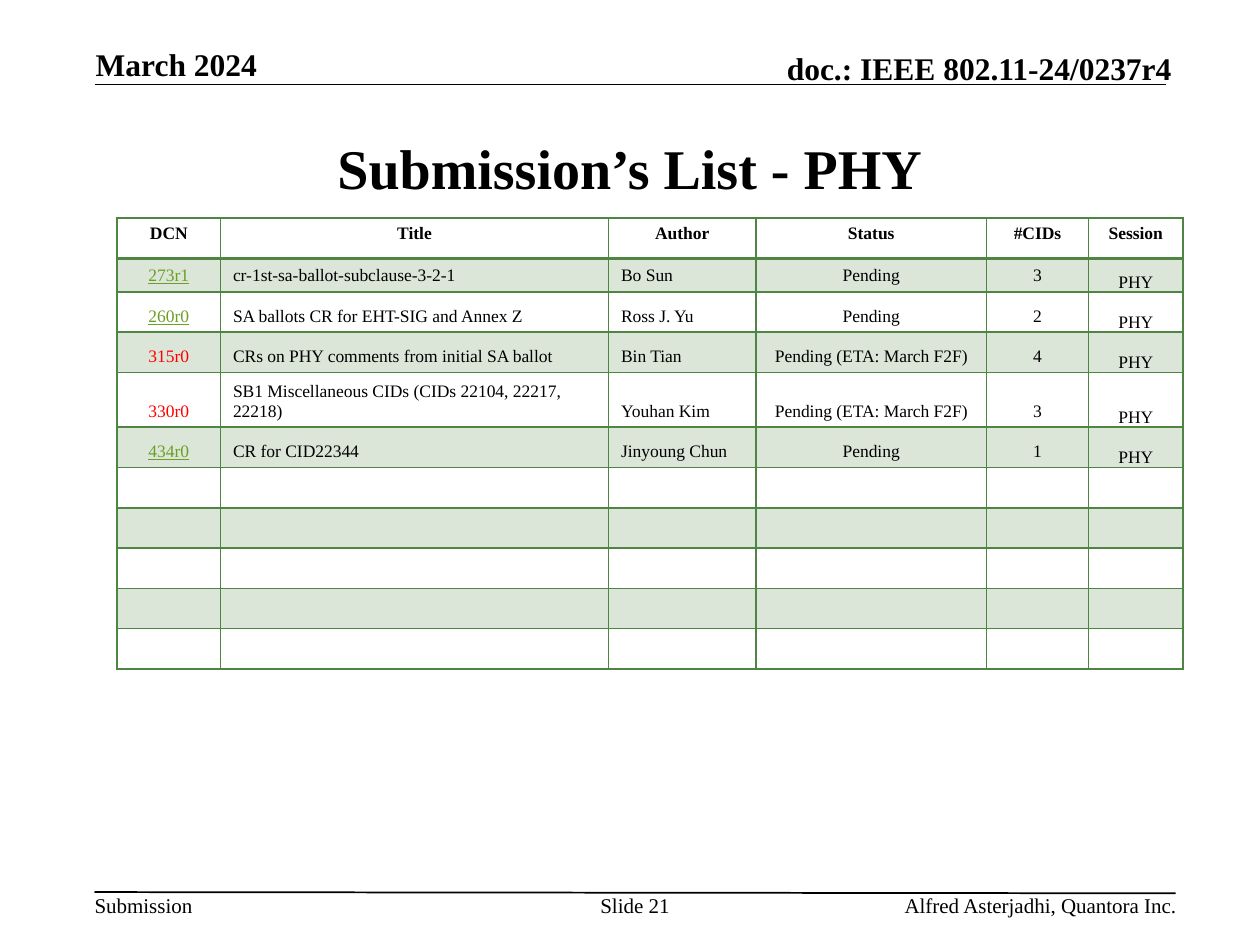
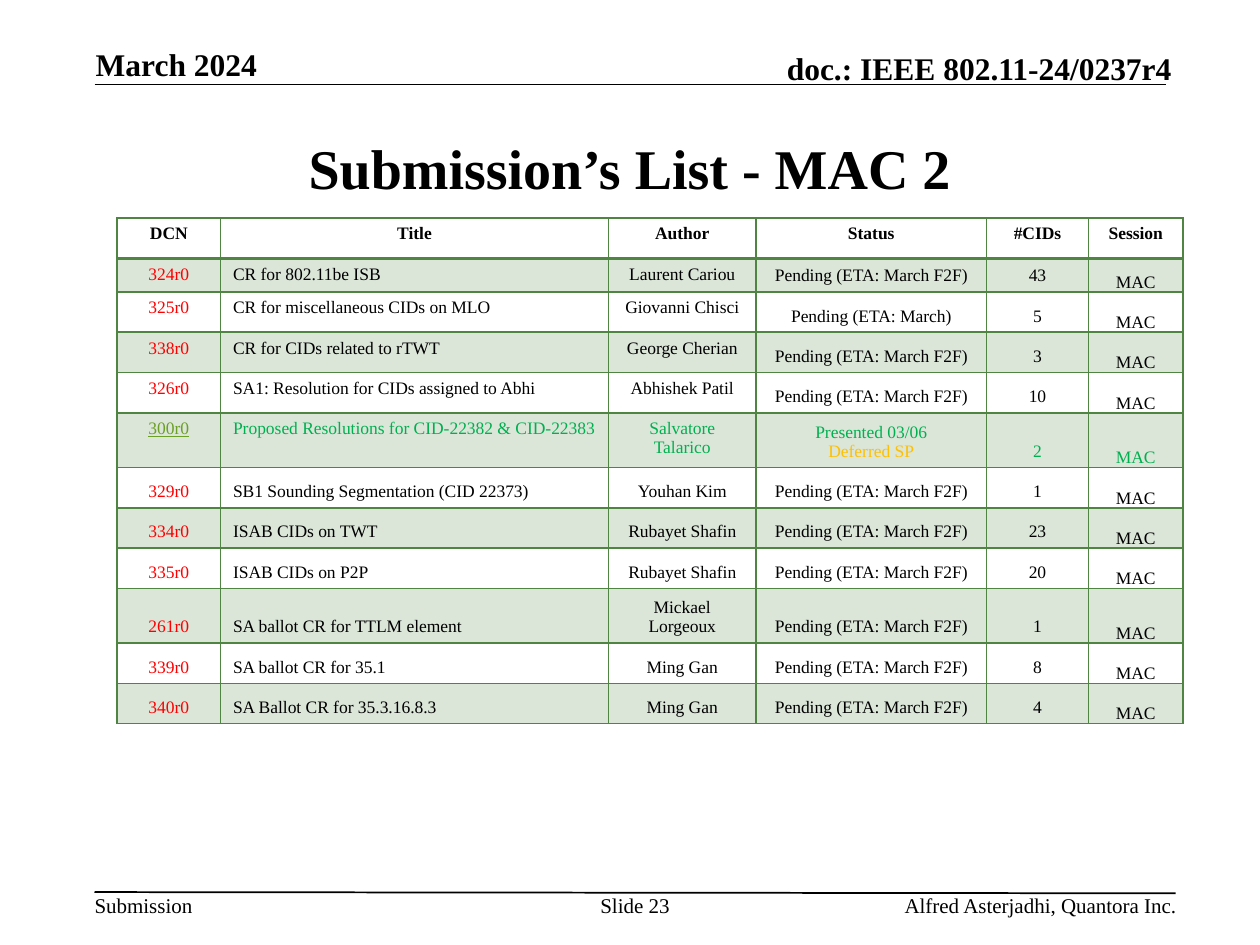
from dataclasses import dataclass

from lxml.etree import SubElement
from pptx import Presentation
from pptx.dml.color import RGBColor
from pptx.enum.shapes import MSO_CONNECTOR
from pptx.enum.text import MSO_ANCHOR as Anchor, PP_ALIGN as Align
from pptx.oxml.ns import qn
from pptx.util import Inches, Pt

FONT = "Times New Roman"
BLACK, WHITE, GREEN = "000000", "FFFFFF", "4E8542"
LINK, UNPOSTED, PRESENTED, DEFERRED = "6B9F25", "FF0000", "00B050", "FFC000"
HEADINGS = ("DCN", "Title", "Author", "Status", "#CIDs", "Session")
COLUMN_WIDTHS = (0.82, 3.08, 1.17, 1.83, 0.81, 0.75)
ROW_HEIGHT, FIRST_ROW_HEIGHT = 0.32, 0.18
TABLE_LEFT, TABLE_TOP = 0.93, 1.73
PENDING = "Pending (ETA: March F2F)"


@dataclass(frozen=True)
class Style:
    size: float
    bold: bool = False
    color: str = BLACK
    underline: bool = False
    align: Align = Align.LEFT


@dataclass(frozen=True)
class Label:
    text: str
    left: float
    top: float
    width: float
    height: float
    style: Style
    anchor: Anchor = Anchor.TOP
    wrap: bool = True


@dataclass(frozen=True)
class Rule:
    start: tuple[float, float]
    end: tuple[float, float]


@dataclass(frozen=True)
class Submission:
    dcn: str
    title: str
    author: str
    status: str
    cids: int
    posted: bool = False
    color: str = BLACK
    anchor: Anchor = Anchor.BOTTOM


@dataclass(frozen=True)
class ListPage:
    number: int
    session: str
    title: str
    author_align: Align
    submissions: tuple[Submission, ...]
    empty_rows: int = 0


HEADER = Style(18, bold=True)
HEADER_RIGHT = Style(18, bold=True, align=Align.RIGHT)
LABELS = (
    Label("Submission", 0.75, 7.08, 0.78, 0.2, Style(12), wrap=False),
    Label("doc.: IEEE 802.11-24/0237r4", 5.47, 0.39, 3.83, 0.3, HEADER_RIGHT, Anchor.BOTTOM),
    Label("March 2024", 0.76, 0.36, 2.05, 0.3, HEADER, Anchor.BOTTOM),
    Label("Alfred Asterjadhi, Quantora Inc.", 5.86, 7.08, 3.48, 0.2, Style(12, align=Align.RIGHT)),
)
RULES = (Rule((0.75, 0.67), (9.25, 0.67)), Rule((0.75, 7.08), (9.33, 7.09)))

PAGES = (
    ListPage(21, "PHY", "Submission’s List - PHY", Align.LEFT, (
        Submission("273r1", "cr-1st-sa-ballot-subclause-3-2-1", "Bo Sun", "Pending", 3, posted=True),
        Submission("260r0", "SA ballots CR for EHT-SIG and Annex Z", "Ross J. Yu", "Pending", 2, posted=True),
        Submission("315r0", "CRs on PHY comments from initial SA ballot", "Bin Tian", PENDING, 4),
        Submission("330r0", "SB1 Miscellaneous CIDs (CIDs 22104, 22217, 22218)", "Youhan Kim", PENDING, 3),
        Submission("434r0", "CR for CID22344", "Jinyoung Chun", "Pending", 1, posted=True),
    ), empty_rows=5),
    ListPage(23, "MAC", "Submission’s List - MAC 2", Align.CENTER, (
        Submission("324r0", "CR for 802.11be ISB", "Laurent Cariou", PENDING, 43, anchor=Anchor.TOP),
        Submission("325r0", "CR for miscellaneous CIDs on MLO", "Giovanni Chisci",
                   "Pending (ETA: March)", 5, anchor=Anchor.TOP),
        Submission("338r0", "CR for CIDs related to rTWT", "George Cherian", PENDING, 3, anchor=Anchor.TOP),
        Submission("326r0", "SA1: Resolution for CIDs assigned to Abhi", "Abhishek Patil",
                   PENDING, 10, anchor=Anchor.TOP),
        Submission("300r0", "Proposed Resolutions for CID-22382 & CID-22383", "Salvatore Talarico",
                   "Presented 03/06\nDeferred SP", 2, True, PRESENTED, Anchor.TOP),
        Submission("329r0", "SB1 Sounding Segmentation (CID 22373)", "Youhan Kim", PENDING, 1),
        Submission("334r0", "ISAB CIDs on TWT", "Rubayet Shafin", PENDING, 23),
        Submission("335r0", "ISAB CIDs on P2P", "Rubayet Shafin", PENDING, 20),
        Submission("261r0", "SA ballot CR for TTLM element", "Mickael Lorgeoux", PENDING, 1),
        Submission("339r0", "SA ballot CR for 35.1", "Ming Gan", PENDING, 8),
        Submission("340r0", "SA Ballot CR for 35.3.16.8.3", "Ming Gan", PENDING, 4),
    )),
)


def paint(color_format, color: str) -> None:
    """Set a colour format from a hex string."""
    color_format.rgb = RGBColor.from_string(color)


def format_paragraph(para, style: Style) -> None:
    """Apply a text style to a whole paragraph."""
    para.alignment = style.align
    para.font.name = FONT
    para.font.size = Pt(style.size)
    para.font.bold = style.bold
    para.font.underline = style.underline
    paint(para.font.color, style.color)


def add_label(page, label: Label) -> None:
    """Draw a text box without margins."""
    box = page.shapes.add_textbox(*map(Inches, (label.left, label.top, label.width, label.height)))
    frame = box.text_frame
    frame.margin_left = frame.margin_right = frame.margin_top = frame.margin_bottom = 0
    frame.word_wrap = label.wrap
    frame.vertical_anchor = label.anchor
    frame.text = label.text
    format_paragraph(frame.paragraphs[0], label.style)


def add_rule(page, rule: Rule) -> None:
    """Draw a thin black line without a shadow."""
    line = page.shapes.add_connector(MSO_CONNECTOR.STRAIGHT, *map(Inches, rule.start + rule.end))
    line.line.width = Pt(1)
    paint(line.line.color, BLACK)
    SubElement(line._element.spPr, qn("a:effectLst"))


def set_title(page, text: str) -> None:
    """Move, fill and format the title placeholder."""
    title = page.shapes.title
    title.left, title.top, title.width, title.height = map(Inches, (0.75, 0.75, 8.5, 1.16))
    title.text_frame.text = text
    title.text_frame.vertical_anchor = Anchor.MIDDLE
    format_paragraph(title.text_frame.paragraphs[0], Style(32, bold=True, align=Align.CENTER))


def decorate_cell(cell, row: int) -> None:
    """Give a cell its borders and its banded fill."""
    properties = cell._tc.get_or_add_tcPr()
    widths = {"lnL": 1, "lnR": 1, "lnT": 2 if row == 1 else 1, "lnB": 2 if row == 0 else 1}
    for side, width in widths.items():
        border = SubElement(properties, qn(f"a:{side}"), w=str(Pt(width)))
        SubElement(SubElement(border, qn("a:solidFill")), qn("a:srgbClr"), val=GREEN)
    cell.fill.solid()
    banded = row % 2 == 1
    paint(cell.fill.fore_color, GREEN if banded else WHITE)
    if banded:
        fill_color = properties.find(f"{qn('a:solidFill')}/{qn('a:srgbClr')}")
        SubElement(fill_color, qn("a:alpha"), val="20000")


def write_cell(cell, text: str, styles: tuple[Style, ...], anchor: Anchor) -> None:
    """Write one styled paragraph per line of text."""
    cell.text_frame.text = text
    cell.vertical_anchor = anchor
    for para, style in zip(cell.text_frame.paragraphs, styles):
        format_paragraph(para, style)


def write_submission(cells, entry: Submission, page_data: ListPage) -> None:
    """Fill a table row with one submission."""
    centred = Style(10, color=entry.color, align=Align.CENTER)
    dcn = Style(10, color=LINK if entry.posted else UNPOSTED, underline=entry.posted, align=Align.CENTER)
    author = Style(10, color=entry.color, align=page_data.author_align)
    deferred = Style(10, color=DEFERRED, align=Align.CENTER)
    contents = (
        (entry.dcn, (dcn,), entry.anchor),
        (entry.title, (Style(10, color=entry.color),), entry.anchor),
        (entry.author, (author,), entry.anchor),
        (entry.status, (centred, deferred), Anchor.BOTTOM),
        (str(entry.cids), (centred,), Anchor.BOTTOM),
        (page_data.session, (centred,), Anchor.BOTTOM),
    )
    for cell, content in zip(cells, contents):
        write_cell(cell, *content)
    session = cells[-1]
    session.margin_left = session.margin_right = session.margin_top = session.margin_bottom = 0


def add_submission_table(page, page_data: ListPage) -> None:
    """Draw the table of submissions with its spare rows."""
    filled = len(page_data.submissions)
    row_count = 1 + filled + page_data.empty_rows
    heights = [ROW_HEIGHT, FIRST_ROW_HEIGHT] + [ROW_HEIGHT] * (row_count - 2)
    table = page.shapes.add_table(
        row_count, len(HEADINGS), Inches(TABLE_LEFT), Inches(TABLE_TOP),
        Inches(sum(COLUMN_WIDTHS)), Inches(sum(heights))).table
    table.first_row = table.horz_banding = False
    for column, width in zip(table.columns, COLUMN_WIDTHS):
        column.width = Inches(width)
    for index, (row, height) in enumerate(zip(table.rows, heights)):
        row.height = Inches(height)
        cells = list(row.cells)
        for cell in cells:
            decorate_cell(cell, index)
        if index == 0:
            for cell, heading in zip(cells, HEADINGS):
                write_cell(cell, heading, (Style(10, bold=True, align=Align.CENTER),), Anchor.TOP)
        elif index <= filled:
            write_submission(cells, page_data.submissions[index - 1], page_data)
        else:
            for cell in cells:
                SubElement(cell.text_frame.paragraphs[0]._p, qn("a:endParaRPr"), sz="1000")


def add_page(deck, page_data: ListPage) -> None:
    """Build one slide with its shared header and footer."""
    page = deck.slides.add_slide(deck.slide_layouts[5])
    for rule in RULES:
        add_rule(page, rule)
    number = Label(f"Slide {page_data.number}", 4.75, 7.08, 0.58, 0.4, Style(12, align=Align.CENTER))
    for label in LABELS + (number,):
        add_label(page, label)
    set_title(page, page_data.title)
    add_submission_table(page, page_data)


def main() -> None:
    """Build and save the deck."""
    deck = Presentation()
    deck.slide_width, deck.slide_height = Inches(10), Inches(7.5)
    for page_data in PAGES:
        add_page(deck, page_data)
    deck.save("out.pptx")


if __name__ == "__main__":
    main()
